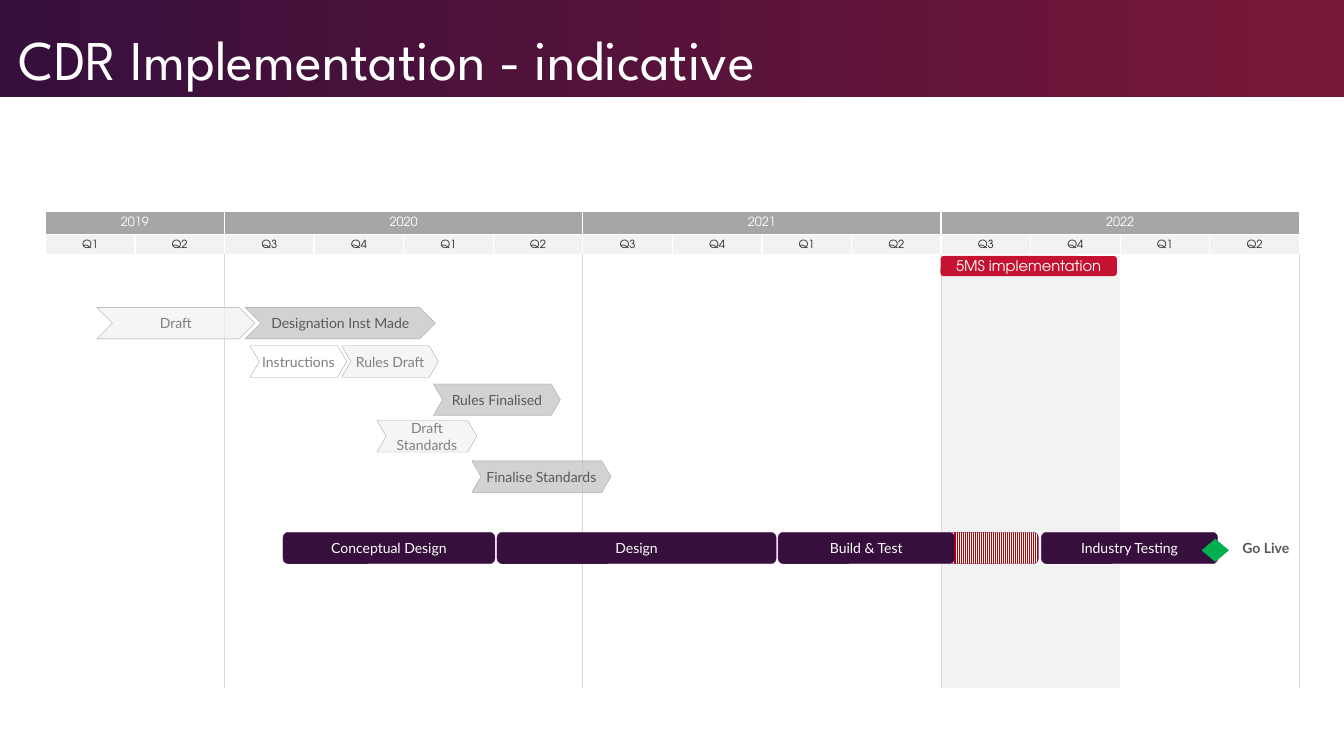
from pptx import Presentation
from pptx.dml.color import RGBColor
from pptx.enum.dml import MSO_PATTERN
from pptx.enum.shapes import MSO_SHAPE
from pptx.enum.text import MSO_ANCHOR, PP_ALIGN
from pptx.oxml.ns import qn
from pptx.util import Pt
from lxml import etree

RECT, CHEVRON = MSO_SHAPE.RECTANGLE, MSO_SHAPE.CHEVRON
ROUND, DIAMOND = MSO_SHAPE.ROUNDED_RECTANGLE, MSO_SHAPE.DIAMOND
LEFT, CENTER, RIGHT = PP_ALIGN.LEFT, PP_ALIGN.CENTER, PP_ALIGN.RIGHT
TOP, MIDDLE, BOTTOM = MSO_ANCHOR.TOP, MSO_ANCHOR.MIDDLE, MSO_ANCHOR.BOTTOM
STRIPES = MSO_PATTERN.LIGHT_VERTICAL

COLORS = {
    "white": "FFFFFF", "plum": "360F3C", "plum_line": "55185F", "wine": "771738",
    "year": "A6A6A6", "pale": "F2F2F2", "rule": "D9D9D9", "done": "BFBFBF",
    "ink": "222324", "text": "575A5D", "muted": "808080",
    "red": "C41230", "stripe": "C00000", "green": "00B050",
}
BODY, HEAD, TITLE = "Lato", "TeX Gyre Adventor", "League Spartan"
BAR_H = 22.5


def rgb(name):
    return RGBColor.from_string(COLORS[name])


class Timeline:
    def __init__(self, slide):
        self.slide = slide

    def set_text(self, tf, text, size, color, font=BODY, align=CENTER, bold=False):
        p = tf.paragraphs[0]
        p.text = text
        p.alignment = align
        p.font.size, p.font.name, p.font.bold = Pt(size), font, bold
        p.font.color.rgb = rgb(color)
        return p

    def label(self, x, y, w, h, text, size, color, font=BODY, align=LEFT,
              anchor=TOP, bold=False):
        tf = self.slide.shapes.add_textbox(Pt(x), Pt(y), Pt(w), Pt(h)).text_frame
        tf.word_wrap = True
        tf.vertical_anchor = anchor
        return self.set_text(tf, text, size, color, font, align, bold)

    def shape(self, kind, x, y, w, h, fill, line=None, line_w=0.25):
        sp = self.slide.shapes.add_shape(kind, Pt(x), Pt(y), Pt(w), Pt(h))
        sp.shadow.inherit = False
        sp.fill.solid()
        sp.fill.fore_color.rgb = rgb(fill)
        if line:
            sp.line.color.rgb = rgb(line)
            sp.line.width = Pt(line_w)
        else:
            sp.line.fill.background()
        return sp

    def caption(self, sp, text, color, size=10, font=BODY):
        tf = sp.text_frame
        tf.margin_left = tf.margin_right = tf.margin_top = tf.margin_bottom = 0
        tf.word_wrap = True
        tf.vertical_anchor = MIDDLE
        self.set_text(tf, text, size, color, font)

    def chevron(self, x, y, w, text, fill, color, point):
        sp = self.shape(CHEVRON, x, y, w, BAR_H, fill, "year")
        sp.adjustments[0] = point
        clr = sp.element.spPr.find(qn("a:solidFill")).find(qn("a:srgbClr"))
        etree.SubElement(clr, qn("a:alpha")).set("val", "70000")
        self.caption(sp, text, color)

    def bar(self, x, w, text):
        sp = self.shape(ROUND, x, 380.2, w, BAR_H, "plum", "plum_line")
        if text:
            self.caption(sp, text, "white")
        return sp

    def cell(self, cell, fill=None, borders=None):
        """Set the fill and the borders, given as {side: (colour, width)}."""
        tcPr = cell._tc.get_or_add_tcPr()
        for side in "LRTB":
            ln = etree.SubElement(tcPr, qn("a:ln" + side))
            if borders and side in borders:
                color, width = borders[side]
                ln.set("w", str(Pt(width)))
                solid = etree.SubElement(ln, qn("a:solidFill"))
                etree.SubElement(solid, qn("a:srgbClr")).set("val", COLORS[color])
            else:
                etree.SubElement(ln, qn("a:noFill"))
        cell.margin_left = cell.margin_right = 0
        cell.margin_top = cell.margin_bottom = 0
        cell.vertical_anchor = MIDDLE
        if fill:
            cell.fill.solid()
            cell.fill.fore_color.rgb = rgb(fill)
        else:
            cell.fill.background()

    def calendar(self, x, y, col_w, heights, years, shaded):
        cols = sum(span for _, span in years)
        frame = self.slide.shapes.add_table(
            len(heights), cols, Pt(x), Pt(y), Pt(col_w * cols), Pt(sum(heights)))
        tbl = frame.table
        tbl.first_row = tbl.horz_banding = False
        for col in tbl.columns:
            col.width = Pt(col_w)
        for row, height in zip(tbl.rows, heights):
            row.height = Pt(height)
        white = dict.fromkeys("LRTB", ("white", 1))
        rule = ("rule", 0.5)
        start = 0
        for year, span in years:
            end = start + span - 1
            for c in range(start, end + 1):
                self.cell(tbl.cell(0, c), "year", white)
                self.cell(tbl.cell(1, c), "pale", white)
                self.set_text(tbl.cell(1, c).text_frame, f"Q{c % 4 + 1}", 8, "ink", HEAD)
                sides = {"T": ("white", 1)}
                if c == start and c > 0:
                    sides["L"] = rule
                if c == end:
                    sides["R"] = rule
                self.cell(tbl.cell(2, c), "pale" if c in shaded else None, sides)
            tbl.cell(0, start).merge(tbl.cell(0, end))
            self.set_text(tbl.cell(0, start).text_frame, year, 9, "white", HEAD)
            start += span


def main():
    prs = Presentation()
    prs.slide_width, prs.slide_height = Pt(960), Pt(540)
    t = Timeline(prs.slides.add_slide(prs.slide_layouts[6]))

    # Title band
    band = t.shape(RECT, 0, 0, 960, 69, "plum")
    band.fill.gradient()
    band.fill.gradient_angle = 0
    for stop, color, pos in zip(band.fill.gradient_stops, ("plum", "wine"), (0, 0.99)):
        stop.color.rgb = rgb(color)
        stop.position = pos
    p = t.label(6.5, 4.3, 814, 65.5, "CDR Implementation - indicative", 40, "white",
                TITLE, anchor=BOTTOM)
    p.line_spacing = 0.9

    # Calendar grid
    t.calendar(32.4, 151.2, 63.98, (16.5, 14.5, 309.5),
               [("2019", 2), ("2020", 4), ("2021", 4), ("2022", 4)], shaded=(10, 11))

    # Rules and standards
    draft, made, instructed = ("pale", "muted"), ("done", "text"), ("white", "muted")
    for x, y, w, text, (fill, color), point in [
        (69.1, 219.6, 113, "Draft", draft, 0.5),
        (175, 219.6, 136.1, "Designation Inst Made", made, 0.5),
        (244.1, 247, 69.1, "Rules Draft", draft, 0.29),
        (309.6, 274.3, 90.7, "Rules Finalised", made, 0.29),
        (178.6, 247, 69.1, "Instructions", instructed, 0.29),
        (269.3, 300.4, 71.3, "Draft Standards", draft, 0.29),
        (337, 329.2, 99.4, "Finalise Standards", made, 0.29),
    ]:
        t.chevron(x, y, w, text, fill, color, point)

    # Delivery phases
    t.bar(355, 199.4, "Design")
    buffer = t.bar(678.3, 63.4, "")
    buffer.fill.patterned()
    buffer.fill.pattern = STRIPES
    buffer.fill.fore_color.rgb = rgb("stripe")
    buffer.fill.back_color.rgb = rgb("white")
    t.bar(555.8, 126, "Build & Test")
    t.bar(743.8, 126, "Industry Testing")
    t.bar(202.1, 151.4, "Conceptual Design")

    # Milestones
    t.label(859, 381.6, 69, 20, "Go Live", 10, "text", align=RIGHT, bold=True)
    t.shape(DIAMOND, 858.7, 385.2, 18.7, 15.8, "green", "green", 0.5)
    five = t.shape(ROUND, 671.8, 182.9, 126, 14.4, "red")
    t.caption(five, "5MS implementation", "white", 10.5, HEAD)

    prs.save("out.pptx")


if __name__ == "__main__":
    main()
